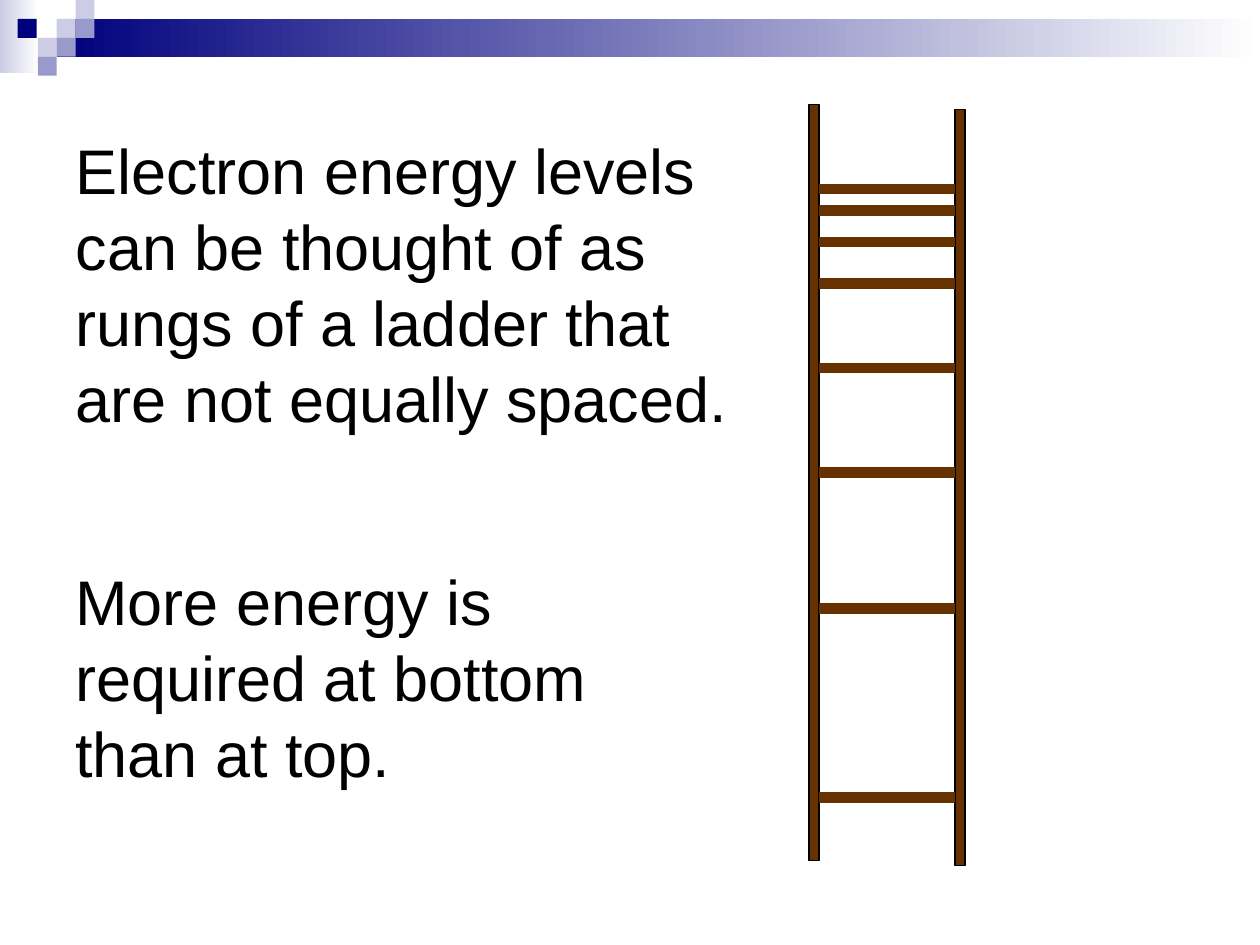
from dataclasses import dataclass

import pptx
import pptx.dml.color
import pptx.enum.shapes
import pptx.enum.text
import pptx.oxml
import pptx.util
from pptx.util import Inches

NAVY, LAVENDER, PERIWINKLE = "00007D", "CCCCE6", "9999CC"
WHITE, BLACK, BROWN = "FFFFFF", "000000", "663300"
SQUARE = 0.15
RAIL_LEFT, RAIL_RIGHT = 6.42, 7.58
RAIL_WIDTH, RAIL_HEIGHT = 0.08, 6
RUNG_HEIGHTS = [1.5, 1.67, 1.92, 2.25, 2.92, 3.75, 4.83, 6.33]
TEXT_FORMAT = {"name": "Arial", "size": pptx.util.Pt(36), "bold": False}


@dataclass
class Box:
    left: float
    top: float
    width: float
    height: float
    colors: tuple[str, ...]
    outline: str | None = None

    def bounds(self) -> list[int]:
        return [Inches(value) for value in (self.left, self.top, self.width, self.height)]


BANDS = [
    Box(0, 0, 0.31, 0.58, (LAVENDER, WHITE)),
    Box(0.45, 0.15, 9.55, 0.3, (NAVY, WHITE)),
]
SQUARES = [
    Box(left, top, SQUARE, SQUARE, (color,))
    for left, top, color in [
        (0.45, 0.15, LAVENDER),
        (0.6, 0, LAVENDER),
        (0.6, 0.15, PERIWINKLE),
        (0.3, 0.3, LAVENDER),
        (0.14, 0.15, NAVY),
        (0.45, 0.3, PERIWINKLE),
        (0.3, 0.45, PERIWINKLE),
    ]
]
RAILS = [
    Box(left, top, RAIL_WIDTH, RAIL_HEIGHT, (BROWN,), BLACK)
    for left, top in [(RAIL_LEFT, 0.83), (RAIL_RIGHT, 0.87)]
]


def set_color(color_format, color: str) -> None:
    color_format.rgb = pptx.dml.color.RGBColor.from_string(color)


def draw_box(slide, box: Box) -> None:
    shape = slide.shapes.add_shape(
        pptx.enum.shapes.MSO_SHAPE.RECTANGLE, *box.bounds()
    )
    shape.shadow.inherit = False
    if len(box.colors) > 1:
        shape.fill.gradient()
        shape.fill.gradient_angle = 0
        for stop, position, color in zip(shape.fill.gradient_stops, (0, 1), box.colors):
            stop.position = position
            set_color(stop.color, color)
    else:
        shape.fill.solid()
        set_color(shape.fill.fore_color, box.colors[0])
    if box.outline:
        set_color(shape.line.color, box.outline)
        shape.line.width = pptx.util.Pt(0.75)
    else:
        shape.line.fill.background()


def draw_rung(slide, height: float) -> None:
    rung = slide.shapes.add_connector(
        pptx.enum.shapes.MSO_CONNECTOR.STRAIGHT,
        Inches(RAIL_LEFT + RAIL_WIDTH),
        Inches(height),
        Inches(RAIL_RIGHT),
        Inches(height),
    )
    set_color(rung.line.color, BROWN)
    rung.line.width = pptx.util.Pt(6)
    properties = rung.element.spPr
    properties.append(properties.makeelement(pptx.oxml.ns.qn("a:effectLst"), {}))


def write_text(shape, text: str, anchor) -> None:
    frame = shape.text_frame
    frame.text = text
    frame_format = {
        "word_wrap": True,
        "auto_size": pptx.enum.text.MSO_AUTO_SIZE.NONE,
        "vertical_anchor": anchor,
    }
    for name, value in frame_format.items():
        setattr(frame, name, value)
    paragraph = frame.paragraphs[0]
    paragraph.alignment = pptx.enum.text.PP_ALIGN.LEFT
    paragraph.line_spacing = pptx.util.Pt(43.4)
    font = paragraph.runs[0].font
    for name, value in TEXT_FORMAT.items():
        setattr(font, name, value)
    set_color(font.color, BLACK)


def main() -> None:
    presentation = pptx.Presentation()
    presentation.slide_width = Inches(10)
    presentation.slide_height = Inches(7.5)
    slide = presentation.slides.add_slide(presentation.slide_layouts[5])

    title = slide.shapes.title
    title_format = {
        "left": Inches(0.5),
        "top": Inches(1.15),
        "width": Inches(5.38),
        "height": Inches(2.2),
    }
    for name, value in title_format.items():
        setattr(title, name, value)
    write_text(
        title,
        "Electron energy levels can be thought of as rungs of a ladder "
        "that are not equally spaced.",
        pptx.enum.text.MSO_ANCHOR.MIDDLE,
    )

    for box in BANDS + SQUARES + RAILS:
        draw_box(slide, box)
    for height in RUNG_HEIGHTS:
        draw_rung(slide, height)

    explanation = slide.shapes.add_textbox(
        Inches(0.5), Inches(4.41), Inches(4.42), Inches(1.92)
    )
    write_text(
        explanation,
        "More energy is required at bottom than at top.",
        pptx.enum.text.MSO_ANCHOR.TOP,
    )
    presentation.save("out.pptx")


if __name__ == "__main__":
    main()
